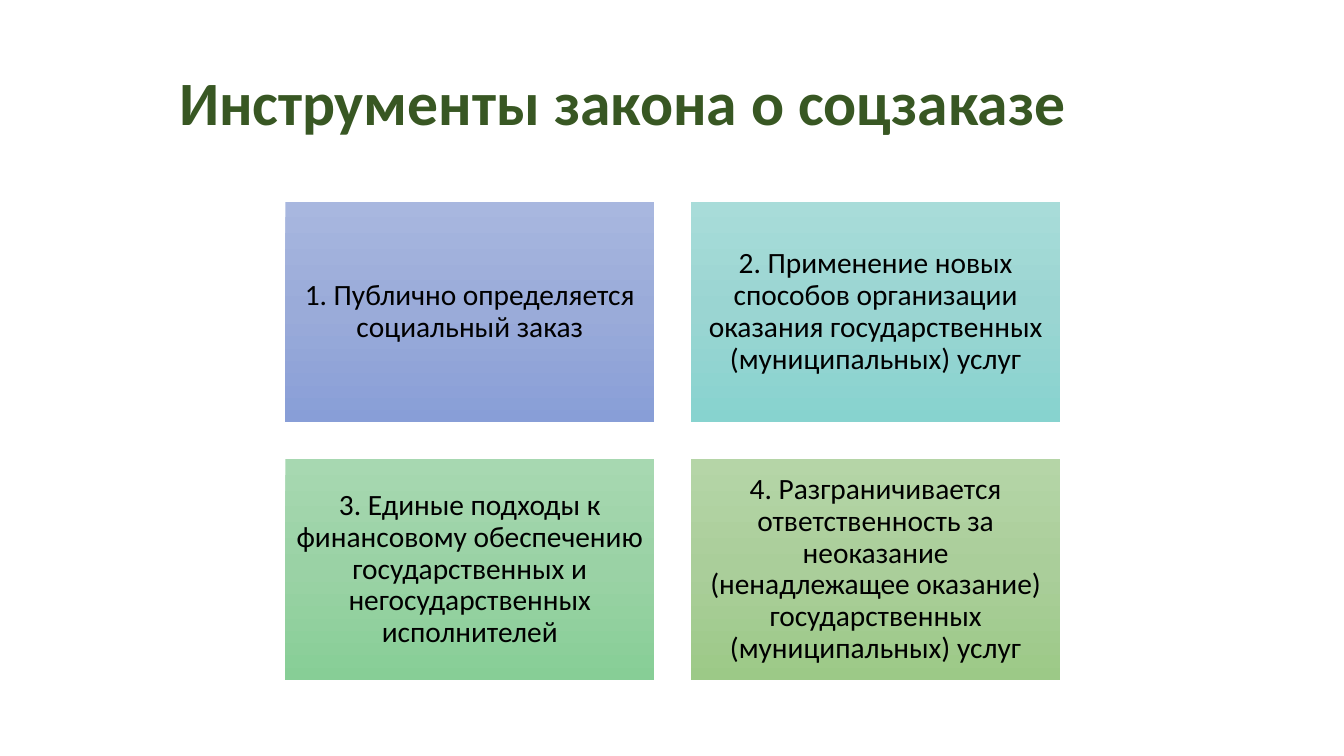
from copy import deepcopy
from dataclasses import dataclass

from pptx import Presentation
from pptx import util as u
from pptx.dml.color import RGBColor
from pptx.enum import shapes, text
from pptx.oxml import ns

COLORS = {
    "title": "385723",
    "body": "000000",
    "blue": ("A8B7DF", "9AABD9", "889ED7"),
    "teal": ("A8DCD9", "9AD5D2", "87D3CF"),
    "green": ("A7D8B1", "9AD2A5", "87CE96"),
    "olive": ("B5D5A7", "AACE9A", "9CC987"),
}
FONT = "Calibri"

# Card grid, in inches
LEFT, TOP = 2.83, 2.0
CARD_W, CARD_H = 3.66, 2.19
GAP = 0.365


@dataclass
class Card:
    col: int
    row: int
    color: str
    label: str


CARDS = [
    Card(0, 0, "blue", "1. Публично определяется социальный заказ"),
    Card(1, 0, "teal", "2. Применение новых способов организации оказания "
                       "государственных (муниципальных) услуг"),
    Card(0, 1, "green", "3. Единые подходы к финансовому обеспечению "
                        "государственных и негосударственных исполнителей"),
    Card(1, 1, "olive", "4. Разграничивается ответственность за неоказание "
                        "(ненадлежащее оказание) государственных "
                        "(муниципальных) услуг"),
]


def write(s, label: str, *, size: float, color: str, bold: bool = False,
          inset: float = 0.09) -> None:
    """Set centred text in a shape."""
    tf = s.text_frame
    tf.word_wrap = True
    tf.vertical_anchor = text.MSO_ANCHOR.MIDDLE
    tf.margin_left = tf.margin_right = u.Inches(inset)
    tf.margin_top = tf.margin_bottom = u.Inches(inset)
    p = tf.paragraphs[0]
    p.alignment = text.PP_ALIGN.CENTER
    p.line_spacing = 0.9
    r = p.add_run()
    r.text = label
    r.font.name = FONT
    r.font.size = u.Pt(size)
    r.font.bold = bold
    r.font.color.rgb = RGBColor.from_string(COLORS[color])


def fill_gradient(s, hexes: tuple[str, ...]) -> None:
    """Fill from top to bottom with evenly spaced colours."""
    s.fill.gradient()
    s.fill.gradient_angle = 270
    stops = s._element.spPr.find(".//" + ns.qn("a:gsLst"))
    while len(stops) < len(hexes):
        stops.append(deepcopy(stops[-1]))
    for i, (stop, value) in enumerate(zip(s.fill.gradient_stops, hexes)):
        stop.position = i / (len(hexes) - 1)
        stop.color.rgb = RGBColor.from_string(value)


def draw_card(slide, card: Card) -> None:
    s = slide.shapes.add_shape(
        shapes.MSO_SHAPE.RECTANGLE,
        u.Inches(LEFT + card.col * (CARD_W + GAP)),
        u.Inches(TOP + card.row * (CARD_H + GAP)),
        u.Inches(CARD_W), u.Inches(CARD_H))
    s.shadow.inherit = False
    s.line.fill.background()
    fill_gradient(s, COLORS[card.color])
    write(s, card.label, size=21, color="body")


def main() -> None:
    prs = Presentation()
    prs.slide_width, prs.slide_height = u.Inches(13.33), u.Inches(7.5)
    slide = prs.slides.add_slide(prs.slide_layouts[6])

    # Title
    title = slide.shapes.add_textbox(
        u.Inches(0.43), u.Inches(0.32), u.Inches(11.5), u.Inches(1.45))
    write(title, "Инструменты закона о соцзаказе", size=44, color="title",
          bold=True)

    # Cards
    for card in CARDS:
        draw_card(slide, card)

    prs.save("out.pptx")


if __name__ == "__main__":
    main()
